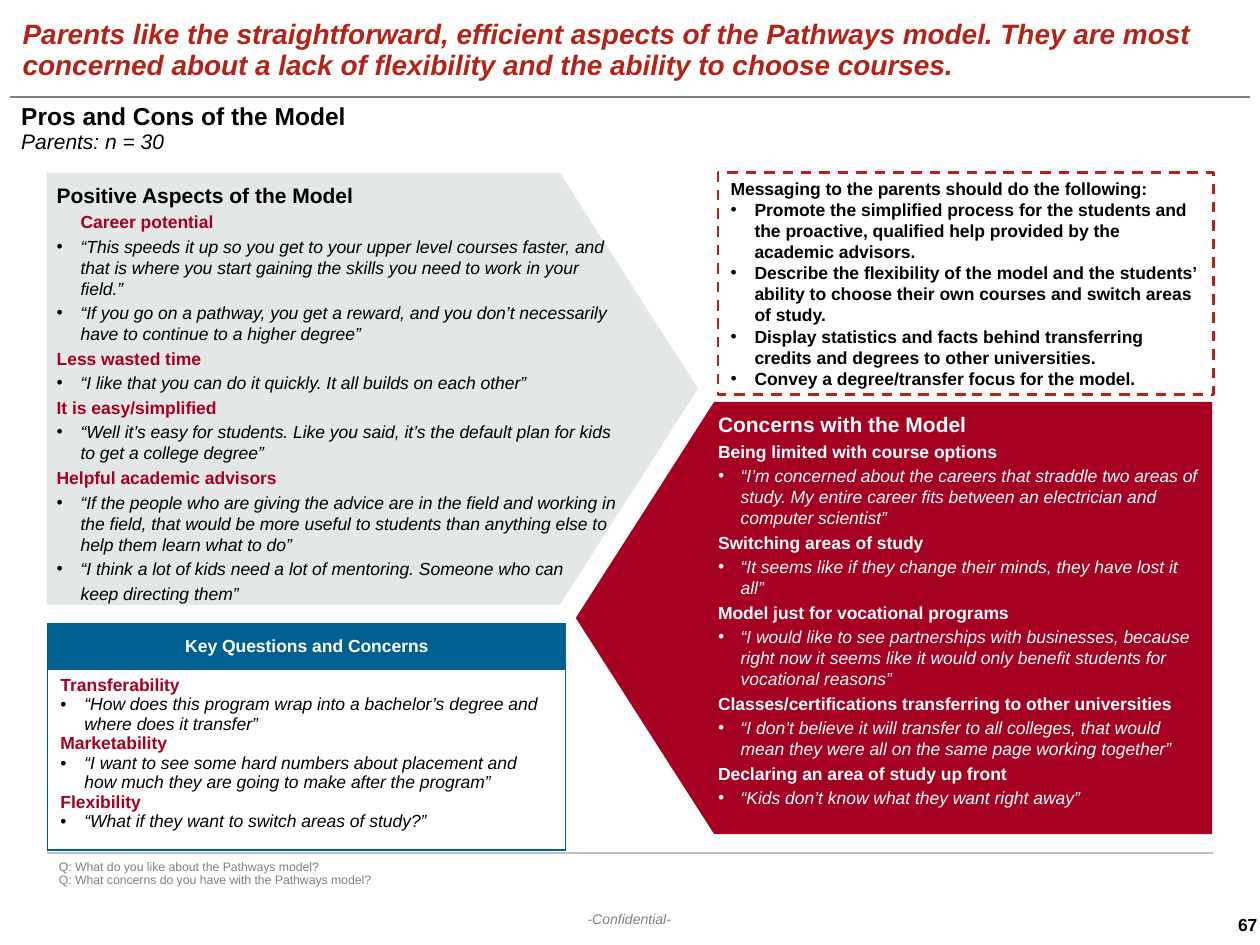
from dataclasses import dataclass

from lxml.etree import SubElement
from pptx import Presentation
from pptx.dml.color import RGBColor
from pptx.enum.dml import MSO_LINE
from pptx.enum.shapes import MSO_CONNECTOR, MSO_SHAPE
from pptx.enum.text import MSO_ANCHOR, PP_ALIGN
from pptx.oxml.ns import qn
from pptx.util import Inches, Pt


@dataclass(frozen=True)
class Theme:
    font: str = "Arial"
    black: str = "000000"
    white: str = "FFFFFF"
    crimson: str = "A50021"
    brick: str = "B32317"
    blue: str = "006190"
    pale: str = "E4E7E7"
    gray: str = "808080"
    rule: str = "BFBFBF"
    title: int = 16
    section: int = 14
    heading: int = 12
    body: int = 10
    footer: int = 8
    note: int = 7


THEME = Theme()

POSITIVES = [
    ("heading", "Positive Aspects of the Model"),
    ("indented", "Career potential"),
    ("quote", "“This speeds it up so you get to your upper level courses faster, and that is where you start gaining the skills you need to work in your field.”"),
    ("quote", "“If you go on a pathway, you get a reward, and you don’t necessarily have to continue to a higher degree”"),
    ("topic", "Less wasted time"),
    ("quote", "“I like that you can do it quickly. It all builds on each other”"),
    ("topic", "It is easy/simplified"),
    ("quote", "“Well it’s easy for students. Like you said, it’s the default plan for kids to get a college degree”"),
    ("topic", "Helpful academic advisors"),
    ("quote", "“If the people who are giving the advice are in the field and working in the field, that would be more useful to students than anything else to help them learn what to do”"),
    ("quote", "“I think a lot of kids need a lot of mentoring. Someone who can"),
    ("continued", "keep directing them”"),
]
CONCERNS = [
    ("heading", "Concerns with the Model"),
    ("topic", "Being limited with course options"),
    ("quote", "“I’m concerned about the careers that straddle two areas of study. My entire career fits between an electrician and computer scientist”"),
    ("topic", "Switching areas of study"),
    ("quote", "“It seems like if they change their minds, they have lost it all”"),
    ("topic", "Model just for vocational programs"),
    ("quote", "“I would like to see partnerships with businesses, because right now it seems like it would only benefit students for vocational reasons”"),
    ("topic", "Classes/certifications transferring to other universities"),
    ("quote", "“I don’t believe it will transfer to all colleges, that would mean they were all on the same page working together”"),
    ("topic", "Declaring an area of study up front"),
    ("quote", "“Kids don’t know what they want right away”"),
]
QUESTIONS = [
    ("topic", "Transferability"),
    ("quote", "“How does this program wrap into a bachelor’s degree and where does it transfer”"),
    ("topic", "Marketability"),
    ("quote", "“I want to see some hard numbers about placement and how much they are going to make after the program”"),
    ("topic", "Flexibility"),
    ("quote", "“What if they want to switch areas of study?”"),
]
MESSAGES = [
    ("heading", "Messaging to the parents should do the following:"),
    ("point", "Promote the simplified process for the students and the proactive, qualified help provided by the academic advisors."),
    ("point", "Describe the flexibility of the model and the students’ ability to choose their own courses and switch areas of study."),
    ("point", "Display statistics and facts behind transferring credits and degrees to other universities."),
    ("point", "Convey a degree/transfer focus for the model."),
]


def rgb(value):
    return RGBColor.from_string(value)


def set_indent(para, left, hanging=0, bullet_color=None):
    properties = para._p.get_or_add_pPr()
    properties.set("marL", str(Inches(left)))
    properties.set("indent", str(-Inches(hanging)))
    if bullet_color:
        color = SubElement(properties, qn("a:buClr"))
        SubElement(color, qn("a:srgbClr"), val=bullet_color)
        SubElement(properties, qn("a:buFont"), typeface=THEME.font)
        SubElement(properties, qn("a:buChar"), char="•")


def style(para, size, color, bold=False, italic=False, align=PP_ALIGN.LEFT, spacing=None):
    para.alignment = align
    if spacing:
        para.line_spacing = spacing
    for span in para.runs:
        span.font.name = THEME.font
        span.font.size = Pt(size)
        span.font.bold = bold
        span.font.italic = italic
        span.font.color.rgb = rgb(color)


def set_frame(frame, margins=(0.1, 0.05, 0.1, 0.05), anchor=MSO_ANCHOR.TOP, wrap=True):
    frame.margin_left, frame.margin_top, frame.margin_right, frame.margin_bottom = map(Inches, margins)
    frame.vertical_anchor = anchor
    frame.word_wrap = wrap


def write_list(frame, items, color, topic_color, heading_size=THEME.heading,
               base=0, hanging=0.19, gap=0, spacing=None):
    frame.text = "\n".join(text for _, text in items)
    for index, (para, (kind, _)) in enumerate(zip(frame.paragraphs, items)):
        bulleted = kind in ("quote", "point")
        shifted = bulleted or kind in ("indented", "continued")
        set_indent(para, base + hanging * shifted, hanging * bulleted, color if bulleted else None)
        if gap:
            para.space_before = Pt(gap if index else 0)
            para.space_after = Pt(gap)
        spoken = kind in ("quote", "continued")
        style(para, heading_size if kind == "heading" else THEME.body,
              topic_color if kind in ("topic", "indented") else color,
              bold=not spoken, italic=spoken, spacing=spacing)


def add_text(page, place, text, size, color, bold=False, italic=False,
             align=PP_ALIGN.LEFT, spacing=None, **frame_options):
    box = page.shapes.add_textbox(*map(Inches, place))
    set_frame(box.text_frame, **frame_options)
    box.text_frame.text = text
    for para in box.text_frame.paragraphs:
        style(para, size, color, bold, italic, align, spacing)
    return box


def add_rule(page, left, right, top, color, width):
    line = page.shapes.add_connector(MSO_CONNECTOR.STRAIGHT, Inches(left), Inches(top), Inches(right), Inches(top))
    line.line.color.rgb = rgb(color)
    line.line.width = Pt(width)
    SubElement(line._element.spPr, qn("a:effectLst"))


def add_panel(page, place, fill, flipped=False):
    panel = page.shapes.add_shape(MSO_SHAPE.PENTAGON, *map(Inches, place))
    panel.adjustments[0] = 0.32
    panel.shadow.inherit = False
    panel.fill.solid()
    panel.fill.fore_color.rgb = rgb(fill)
    panel.line.fill.background()
    if flipped:
        panel._element.spPr.find(qn("a:xfrm")).set("flipH", "1")
    set_frame(panel.text_frame, margins=(0.08,) * 4)
    return panel.text_frame


def add_message_box(page):
    box = page.shapes.add_shape(MSO_SHAPE.RECTANGLE, Inches(5.7), Inches(1.37), Inches(3.93), Inches(1.76))
    box.shadow.inherit = False
    box.fill.background()
    box.line.color.rgb = rgb(THEME.brick)
    box.line.width = Pt(1.5)
    box.line.dash_style = MSO_LINE.DASH
    set_frame(box.text_frame, anchor=MSO_ANCHOR.MIDDLE)
    write_list(box.text_frame, MESSAGES, THEME.black, THEME.black, THEME.body)


def set_borders(cell):
    properties = cell._tc.get_or_add_tcPr()
    for position, side in enumerate(("L", "R", "T", "B")):
        border = properties.makeelement(qn(f"a:ln{side}"), {"w": str(Pt(0.75))})
        fill = SubElement(border, qn("a:solidFill"))
        SubElement(fill, qn("a:srgbClr"), val=THEME.blue)
        properties.insert(position, border)


def add_question_table(page):
    table = page.shapes.add_table(2, 1, Inches(0.38), Inches(4.95), Inches(4.11), Inches(1.78)).table
    table.horz_banding = False
    for row, height in zip(table.rows, (0.36, 1.42)):
        row.height = Inches(height)
    header, body = table.cell(0, 0), table.cell(1, 0)
    header.fill.solid()
    header.fill.fore_color.rgb = rgb(THEME.blue)
    header.vertical_anchor = MSO_ANCHOR.MIDDLE
    header.text_frame.text = "Key Questions and Concerns"
    style(header.text_frame.paragraphs[0], THEME.body, THEME.white, bold=True, align=PP_ALIGN.CENTER)
    body.fill.background()
    write_list(body.text_frame, QUESTIONS, THEME.black, THEME.crimson)
    for cell in (header, body):
        set_borders(cell)


def add_title(page):
    title = page.shapes.title
    title.left, title.top, title.width, title.height = map(Inches, (0.08, 0.06, 9.83, 0.69))
    set_frame(title.text_frame, anchor=MSO_ANCHOR.MIDDLE)
    title.text_frame.text = ("Parents like the straightforward, efficient aspects of the Pathways model. They are most "
                             "concerned about a lack of flexibility and the ability to choose courses.")
    style(title.text_frame.paragraphs[0], THEME.title, THEME.brick, bold=True, italic=True, spacing=0.9)


def main():
    deck = Presentation()
    deck.slide_width, deck.slide_height = Inches(10), Inches(7.5)
    page = deck.slides.add_slide(deck.slide_layouts[5])
    add_text(page, (4, 7.17, 1.99, 0.25), "-Confidential-", THEME.footer, THEME.gray, italic=True,
             align=PP_ALIGN.CENTER, margins=(0.1,) * 4, anchor=MSO_ANCHOR.MIDDLE, wrap=False)
    add_rule(page, 0.08, 9.92, 0.77, THEME.gray, 1.5)
    add_title(page)
    add_text(page, (9.72, 7.25, 0.26, 0.17), "67", THEME.body, THEME.black, bold=True,
             align=PP_ALIGN.RIGHT, margins=(0, 0, 0, 0), anchor=MSO_ANCHOR.MIDDLE, wrap=False)
    add_text(page, (0.37, 6.78, 8.93, 0.69),
             "Q: What do you like about the Pathways model?\nQ: What concerns do you have with the Pathways model?",
             THEME.note, THEME.gray, spacing=0.9)
    add_rule(page, 0.37, 9.63, 6.77, THEME.rule, 0.75)
    section = add_text(page, (0.07, 0.78, 5.55, 0.38), "Pros and Cons of the Model\nParents: n = 30",
                       THEME.section, THEME.black, bold=True, spacing=0.9)
    style(section.text_frame.paragraphs[1], THEME.heading, THEME.black, italic=True)
    concerns = add_panel(page, (4.57, 3.19, 5.05, 3.43), THEME.crimson, flipped=True)
    write_list(concerns, CONCERNS, THEME.white, THEME.white, base=0.5, hanging=0.18, gap=1)
    positives = add_panel(page, (0.37, 1.37, 5.17, 3.43), THEME.pale)
    write_list(positives, POSITIVES, THEME.black, THEME.crimson, gap=1)
    add_question_table(page)
    add_message_box(page)
    deck.save("out.pptx")


if __name__ == "__main__":
    main()
